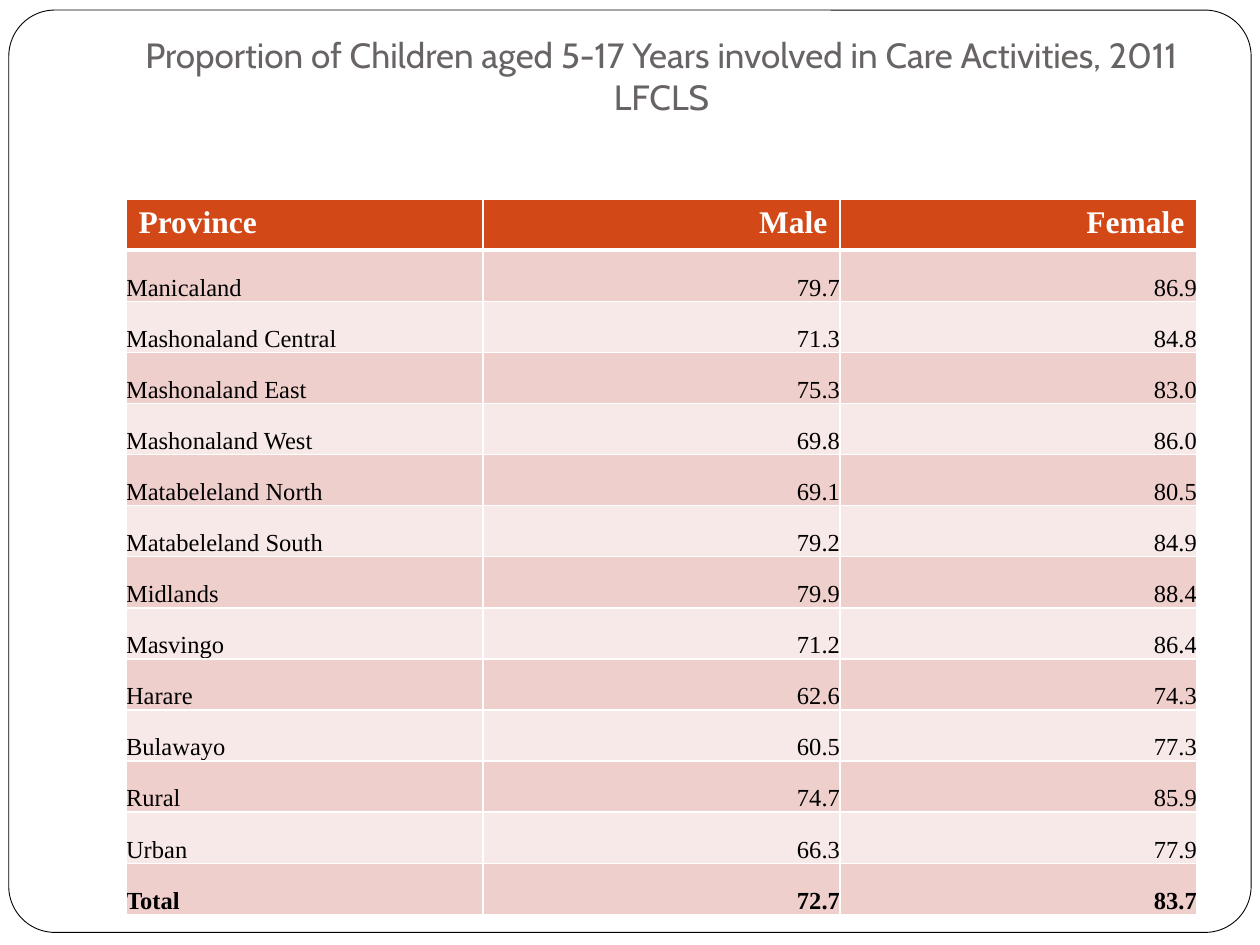
from dataclasses import dataclass

from lxml import etree
from pptx import Presentation
from pptx.dml.color import RGBColor
from pptx.enum import shapes, text
from pptx.oxml import ns
from pptx.util import Inches, Pt


@dataclass(frozen=True)
class Theme:
    """Colours, fonts and type sizes of the slide."""
    white: str = "FFFFFF"
    black: str = "000000"
    grey: str = "696464"
    head: str = "D34817"
    bands: tuple = ("EFCFCC", "F7E9E8")
    sans: str = "Cabin"
    serif: str = "Times New Roman"
    title: int = 20
    label: int = 18
    body: int = 14


THEME = Theme()
TITLE = "Proportion of Children aged 5-17 Years involved in Care Activities, 2011 LFCLS"
HEADS = ("Province", "Male", "Female")
RATES = (
    ("Manicaland", 79.7, 86.9),
    ("Mashonaland Central", 71.3, 84.8),
    ("Mashonaland East", 75.3, 83.0),
    ("Mashonaland West", 69.8, 86.0),
    ("Matabeleland North", 69.1, 80.5),
    ("Matabeleland South", 79.2, 84.9),
    ("Midlands", 79.9, 88.4),
    ("Masvingo", 71.2, 86.4),
    ("Harare", 62.6, 74.3),
    ("Bulawayo", 60.5, 77.3),
    ("Rural", 74.7, 85.9),
    ("Urban", 66.3, 77.9),
    ("Total", 72.7, 83.7),
)


def place(box):
    """Turn a box in inches into lengths."""
    return [Inches(side) for side in box]


def style(para, face, size, color, bold=False):
    """Set the font of a paragraph."""
    font = para.font
    font.name, font.size, font.bold = face, Pt(size), bold
    font.color.rgb = RGBColor.from_string(color)


def add_frame(slide, box):
    """Draw the rounded frame around the slide."""
    frame = slide.shapes.add_shape(shapes.MSO_SHAPE.ROUNDED_RECTANGLE, *place(box))
    frame.adjustments[0] = 0.05
    frame.shadow.inherit = False
    frame.fill.solid()
    frame.fill.fore_color.rgb = RGBColor.from_string(THEME.white)
    frame.line.color.rgb = RGBColor.from_string(THEME.black)
    frame.line.width = Pt(0.5)


def add_title(slide, box):
    """Write the centred title, resting on the bottom of its box."""
    frame = slide.shapes.add_textbox(*place(box)).text_frame
    frame.word_wrap = True
    frame.vertical_anchor = text.MSO_ANCHOR.BOTTOM
    frame.margin_bottom = Inches(0.1)
    para = frame.paragraphs[0]
    para.text = TITLE
    para.alignment = text.PP_ALIGN.CENTER
    style(para, THEME.sans, THEME.title, THEME.grey)


def add_edges(cell, top, bottom):
    """Give a cell white borders with the top and bottom widths in points."""
    props = cell._tc.get_or_add_tcPr()
    for side, width in (("L", 1), ("R", 1), ("T", top), ("B", bottom)):
        line = etree.SubElement(props, ns.qn(f"a:ln{side}"), w=str(Pt(width)))
        fill = etree.SubElement(line, ns.qn("a:solidFill"))
        etree.SubElement(fill, ns.qn("a:srgbClr"), val=THEME.white)


def fill_cell(cell, value, row, col):
    """Write and style one cell by its place in the table."""
    is_head = row == 0
    add_edges(cell, 3 if row == 1 else 1, 3 if is_head else 1)
    cell.fill.solid()
    shade = THEME.head if is_head else THEME.bands[(row - 1) % 2]
    cell.fill.fore_color.rgb = RGBColor.from_string(shade)
    cell.text = str(value)
    para = cell.text_frame.paragraphs[0]
    para.alignment = text.PP_ALIGN.RIGHT if col else text.PP_ALIGN.LEFT
    if is_head:
        style(para, THEME.serif, THEME.label, THEME.white, True)
        return
    cell.vertical_anchor = text.MSO_ANCHOR.BOTTOM
    cell.margin_left = cell.margin_right = cell.margin_top = cell.margin_bottom = 0
    style(para, THEME.serif, THEME.body, THEME.black, row == len(RATES))


def add_rates(slide, box):
    """Build the table of rates by province with equal rows and columns."""
    rows = (HEADS, *RATES)
    table = slide.shapes.add_table(len(rows), len(HEADS), *place(box)).table
    for r, values in enumerate(rows):
        for c, value in enumerate(values):
            fill_cell(table.cell(r, c), value, r, c)


def main():
    """Build the slide and save it."""
    deck = Presentation()
    deck.slide_width, deck.slide_height = Inches(10), Inches(7.5)
    slide = deck.slides.add_slide(deck.slide_layouts[6])
    add_frame(slide, (0.07, 0.08, 9.86, 7.32))
    add_title(slide, (1, 0.5, 8.5, 0.53))
    add_rates(slide, (1, 1.58, 8.5, 5.68))
    deck.save("out.pptx")


if __name__ == "__main__":
    main()
